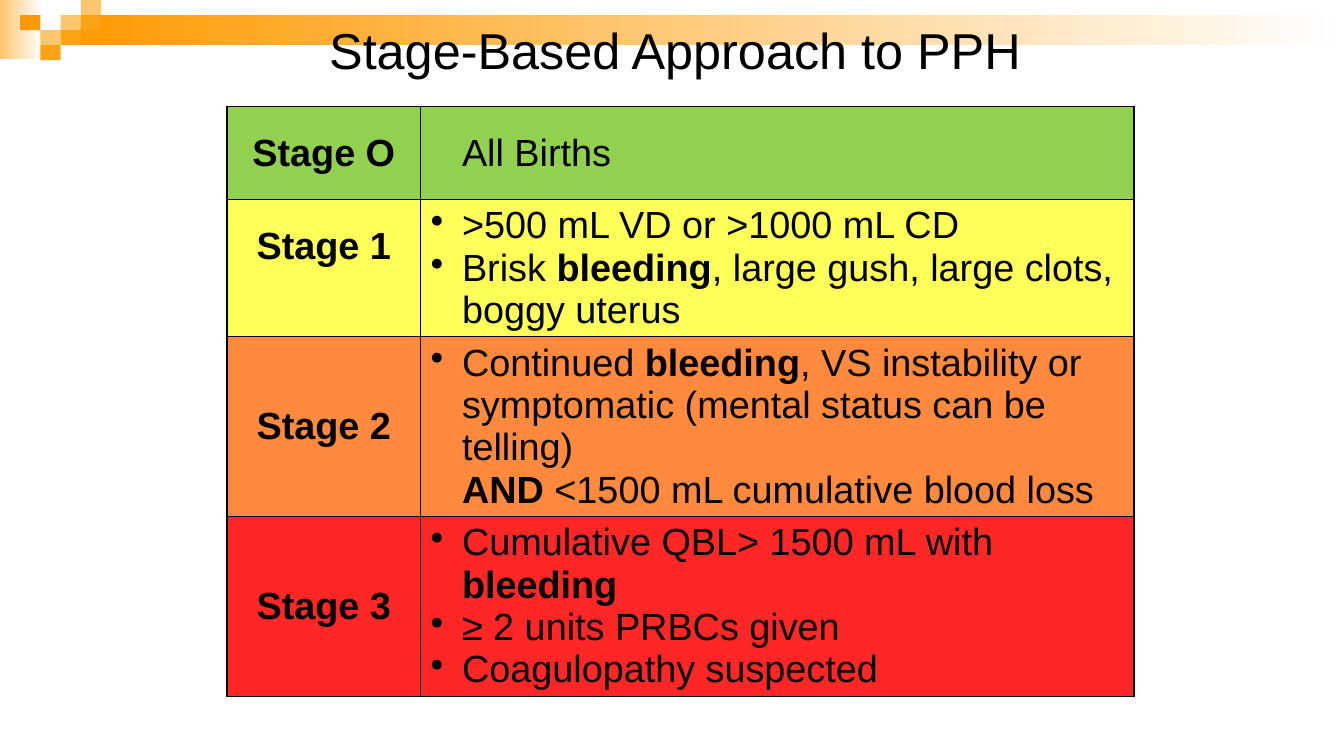
from lxml import etree
from pptx import Presentation
from pptx.dml.color import RGBColor
from pptx.enum.shapes import MSO_SHAPE
from pptx.enum.text import MSO_ANCHOR, MSO_AUTO_SIZE, PP_ALIGN
from pptx.oxml.ns import qn
from pptx.util import Cm, Pt

RECT = MSO_SHAPE.RECTANGLE
MIDDLE, TOP = MSO_ANCHOR.MIDDLE, MSO_ANCHOR.TOP
LEFT, CENTER = PP_ALIGN.LEFT, PP_ALIGN.CENTER
NO_FIT = MSO_AUTO_SIZE.NONE

BLACK = RGBColor(0x00, 0x00, 0x00)
WHITE = RGBColor(0xFF, 0xFF, 0xFF)
PALE = RGBColor(0xFC, 0xC6, 0x6E)
AMBER = RGBColor(0xFB, 0xA3, 0x13)
DEEP = RGBColor(0xFF, 0x99, 0x00)
GREEN = RGBColor(0x92, 0xD0, 0x50)
YELLOW = RGBColor(0xFF, 0xFF, 0x00)
ORANGE = RGBColor(0xFF, 0x66, 0x00)
RED = RGBColor(0xFF, 0x00, 0x00)

FONT = "Arial"
INDENT = Cm(0.79)
TILE_W, TILE_H = 0.51, 0.38
# column, row, colour on the tile grid
TILES = [(3, 1, PALE), (4, 0, PALE), (4, 1, AMBER), (2, 2, PALE),
         (1, 1, DEEP), (3, 2, AMBER), (2, 3, AMBER)]

# name, colour, opacity in percent, row height in cm, lines of (bullet, runs);
# every second run of a line is bold
STAGES = [
    ("Stage O", GREEN, 100, 2.34, [(False, ["All Births"])]),
    ("Stage 1", YELLOW, 65, 3.45, [
        (True, [">500 mL VD or >1000 mL CD"]),
        (True, ["Brisk ", "bleeding",
                ", large gush, large clots, boggy uterus"])]),
    ("Stage 2", ORANGE, 76, 4.53, [
        (True, ["Continued ", "bleeding", ", VS instability or symptomatic "
                "(mental status can be telling)"]),
        (False, ["", "AND", " <1500 mL cumulative blood loss"])]),
    ("Stage 3", RED, 85, 4.53, [
        (True, ["Cumulative QBL> 1500 mL with ", "bleeding"]),
        (True, ["≥ 2 units PRBCs given"]),
        (True, ["Coagulopathy suspected"])]),
]


def write(para, runs, size=27, align=LEFT, indent=0, bullet=False):
    """Fill a paragraph with runs, every second one bold."""
    para.alignment = align
    props = para._p.get_or_add_pPr()
    if indent:
        props.set("marL", str(indent))
        props.set("indent", str(-indent if bullet else 0))
    if bullet:
        etree.SubElement(props, qn("a:buChar")).set("char", "•")
    for i, text in enumerate(runs):
        if text:
            run = para.add_run()
            run.text = text
            run.font.name = FONT
            run.font.size = Pt(size)
            run.font.bold = i % 2 == 1
            run.font.color.rgb = BLACK


def add_rect(slide, x, y, w, h, color, fade=False):
    rect = slide.shapes.add_shape(RECT, Cm(x), Cm(y), Cm(w), Cm(h))
    rect.shadow.inherit = False
    rect.line.fill.background()
    if fade:
        rect.fill.gradient()
        rect.fill.gradient_angle = 0
        for stop, tone in zip(rect.fill.gradient_stops, (color, WHITE)):
            stop.color.rgb = tone
    else:
        rect.fill.solid()
        rect.fill.fore_color.rgb = color


def paint(cell, color, alpha):
    """Give a cell its fill, opacity and thin black borders."""
    cell.fill.solid()
    cell.fill.fore_color.rgb = color
    props = cell._tc.get_or_add_tcPr()
    if alpha < 100:
        tone = props.find(qn("a:solidFill"))[0]
        etree.SubElement(tone, qn("a:alpha")).set("val", str(alpha * 1000))
    for i, side in enumerate(("lnL", "lnR", "lnT", "lnB")):
        line = etree.Element(qn("a:" + side), w=str(Pt(1)))
        fill = etree.SubElement(line, qn("a:solidFill"))
        etree.SubElement(fill, qn("a:srgbClr")).set("val", str(BLACK))
        props.insert(i, line)


def add_banner(slide):
    add_rect(slide, 0, 0, 1.07, 1.48, PALE, fade=True)
    add_rect(slide, 1.53, 0.38, 32.34, 0.76, DEEP, fade=True)
    for col, row, color in TILES:
        add_rect(slide, col * TILE_W, row * TILE_H, TILE_W, TILE_H, color)


def add_title(slide, text):
    title = slide.shapes.title
    title.left, title.top = Cm(5.89), Cm(0.2)
    title.width, title.height = Cm(22.25), Cm(2.11)
    frame = title.text_frame
    frame.auto_size = NO_FIT
    frame.vertical_anchor = MIDDLE
    write(frame.paragraphs[0], [text], size=36, align=CENTER)
    slide.shapes._spTree.append(title._element)  # in front of the banner


def add_stages(slide):
    total = sum(stage[3] for stage in STAGES)
    table = slide.shapes.add_table(len(STAGES), 2, Cm(5.72), Cm(2.69),
                                   Cm(22.86), Cm(total)).table
    table.first_row = table.horz_banding = False
    table.columns[0].width, table.columns[1].width = Cm(4.88), Cm(17.98)
    for row, (name, color, alpha, height, lines) in zip(table.rows, STAGES):
        row.height = Cm(height)
        head, body = row.cells
        for cell in (head, body):
            paint(cell, color, alpha)
        head.vertical_anchor = MIDDLE
        write(head.text_frame.paragraphs[0], ["", name], align=CENTER)
        body.vertical_anchor = MIDDLE if len(lines) == 1 else TOP
        frame = body.text_frame
        for i, (bullet, runs) in enumerate(lines):
            para = frame.add_paragraph() if i else frame.paragraphs[0]
            write(para, runs, indent=INDENT, bullet=bullet)
    table.cell(1, 0).margin_bottom = Cm(1.21)  # lifts the Stage 1 label


def main():
    deck = Presentation()
    deck.slide_width, deck.slide_height = Cm(33.87), Cm(19.05)
    slide = deck.slides.add_slide(deck.slide_layouts[5])
    add_banner(slide)
    add_title(slide, "Stage-Based Approach to PPH")
    add_stages(slide)
    deck.save("out.pptx")


if __name__ == "__main__":
    main()
